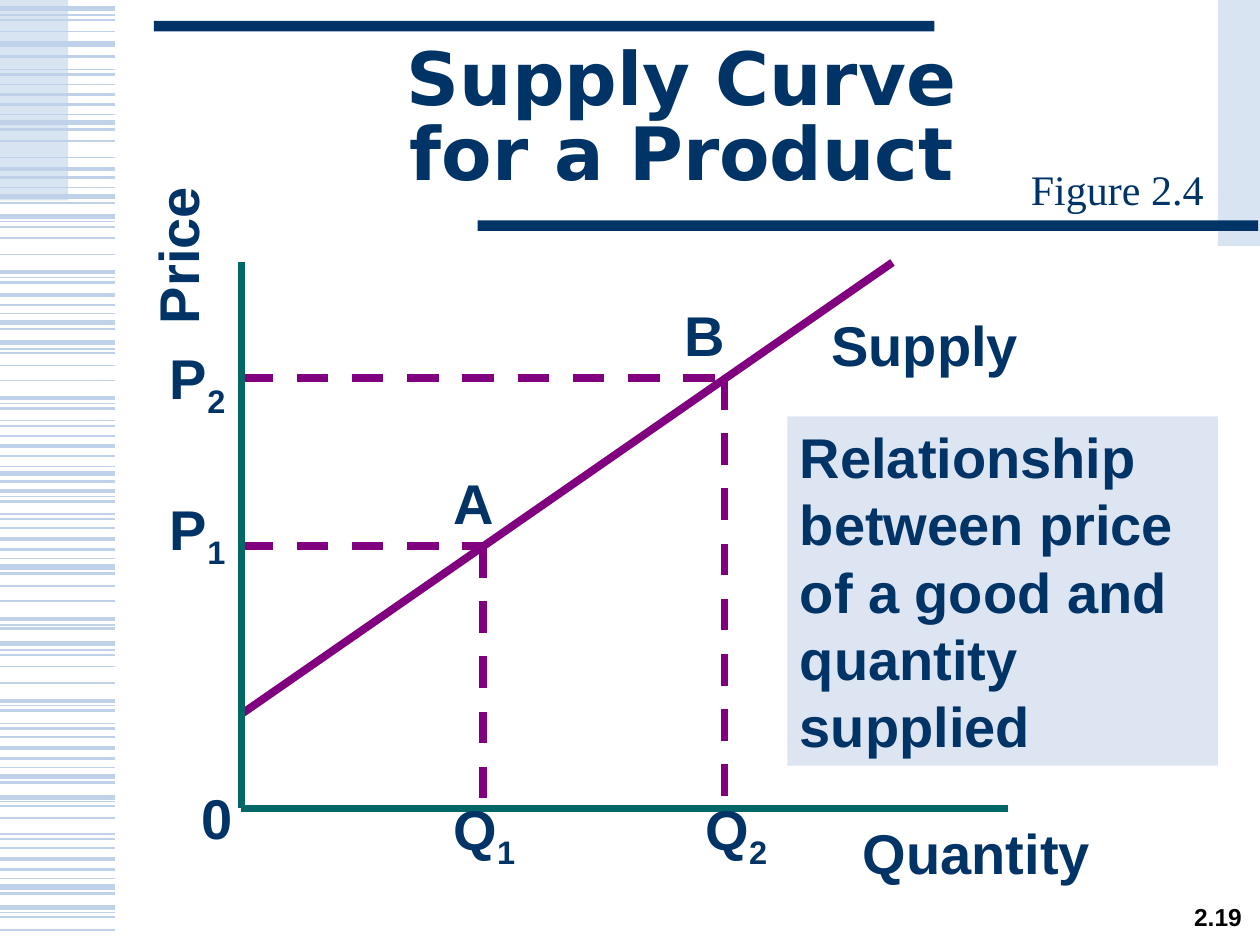
from pptx import Presentation
from pptx.dml.color import RGBColor
from pptx.enum import dml, shapes, text
from pptx.oxml import ns
from pptx.util import Pt
from lxml import etree

HUES = {
    "navy": "003366", "pale": "D9E4F3", "stripe": "C0D2EA", "note": "DDE5F3",
    "curve": "800080", "axis": "006666", "black": "000000",
}

# Line weight -> heights in hundredths of the slide's width / 10
STRIPES = {
    0.75: [12, 55, 91, 149, 176, 220, 249, 277, 320, 334, 370, 394, 408, 443,
           496, 516, 560, 574, 609, 636, 697, 724],
    1: [16, 25, 67, 112, 125, 180, 189, 202, 280, 290, 302, 346, 419, 465,
        477, 520, 529, 542, 585, 640, 649, 662, 673, 728, 738],
    1.5: [45, 59, 83, 103, 141, 161, 224, 242, 261, 324, 338, 362, 382, 398,
          412, 436, 455, 499, 564, 578, 602, 621, 666, 690, 709],
    2.25: [75, 134, 216, 234, 316, 354, 390, 428, 491, 556, 594, 682],
    3: [7, 35, 97, 156, 172, 256, 272, 376, 450, 511, 616, 633, 704, 720],
}
STEP = 0.72


def tint(name):
    return RGBColor.from_string(HUES[name])


def rect(slide, box, hue):
    shape = slide.shapes.add_shape(shapes.MSO_SHAPE.RECTANGLE, *map(Pt, box))
    shape.shadow.inherit = False
    shape.fill.solid()
    shape.fill.fore_color.rgb = tint(hue)
    shape.line.fill.background()
    return shape


def rule(slide, start, end, hue, width, dash=False):
    """Draw a straight line between two points."""
    line = slide.shapes.add_connector(
        shapes.MSO_CONNECTOR.STRAIGHT, *map(Pt, (*start, *end)))
    line.line.color.rgb = tint(hue)
    line.line.width = Pt(width)
    if dash:
        line.line.dash_style = dml.MSO_LINE.DASH
    etree.SubElement(line._element.spPr, ns.qn("a:effectLst"))


def add_run(para, words, size=32, face="Arial", hue="navy", bold=True):
    run = para.add_run()
    run.text = words
    run.font.size = Pt(size)
    run.font.name = face
    run.font.bold = bold
    run.font.color.rgb = tint(hue)
    return run


def write(frame, words, sub="", size=32, **style):
    """Fill a wrapped, left-aligned frame with text and an optional subscript."""
    frame.word_wrap = True
    frame.vertical_anchor = text.MSO_ANCHOR.TOP
    frame.auto_size = text.MSO_AUTO_SIZE.SHAPE_TO_FIT_TEXT
    para = frame.paragraphs[0]
    para.alignment = text.PP_ALIGN.LEFT
    para.line_spacing = Pt(1.2 * size)
    add_run(para, words, size, **style)
    if sub:
        run = add_run(para, sub, size, **style)
        run.font._element.set("baseline", "-25000")


def label(slide, box, words, sub="", **style):
    shape = slide.shapes.add_textbox(*map(Pt, box))
    write(shape.text_frame, words, sub, **style)
    return shape


def backdrop(slide, box):
    """Place the pale corners, heavy bars and striped left edge."""
    x, y, w, h = box
    rect(slide, (x, y, 39, 114.5), "pale")
    rect(slide, (x + w - 24, y, 24, 140.5), "pale")
    rect(slide, (x + 88, y + 12, 446, 6), "navy")
    rect(slide, (x + 273, y + 126, 446, 6), "navy")
    for width, rows in STRIPES.items():
        for row in rows:
            level = y + row * STEP
            rule(slide, (x, level), (x + 66, level), "stripe", width)


def heading(slide, box):
    title = slide.shapes.title
    title.left, title.top, title.width, title.height = map(Pt, box)
    frame = title.text_frame
    frame.word_wrap = True
    frame.auto_size = text.MSO_AUTO_SIZE.NONE
    frame.vertical_anchor = text.MSO_ANCHOR.MIDDLE
    para = frame.paragraphs[0]
    para.alignment = text.PP_ALIGN.CENTER
    para.line_spacing = 0.85
    add_run(para, "Supply Curve", 42, "DejaVu Sans")
    para.add_line_break()
    add_run(para, "for a Product", 42, "DejaVu Sans")


def plot(slide, box):
    """Draw the supply curve, its two marked points and the axes."""
    x, y, w, h = box
    base = y + h
    rule(slide, (x, y + 258), (x + 372, y), "curve", 4.5)
    for across, down in ((138, 162), (276, 66)):
        point = (x + across, y + down)
        rule(slide, (x, y + down), point, "curve", 4.5, dash=True)
        rule(slide, point, (x + across, base), "curve", 4.5, dash=True)
    rule(slide, (x, base), (x, y), "axis", 4.5)
    rule(slide, (x, base), (x + w, base), "axis", 4.5)

    names = [
        (330, 24, 156, "Supply", ""), (348, 314, 156, "Quantity", ""),
        (246, 18, 30, "B", ""), (114, 114, 30, "A", ""),
        (-48, 48, 54, "P", "2"), (-48, 134.5, 54, "P", "1"),
        (114, 306, 54, "Q", "1"), (258, 306, 54, "Q", "2"),
        (-30, 294, 24, "0", ""),
    ]
    for left, top, wide, words, sub in names:
        label(slide, (x + left, y + top, wide, 45.5), words, sub)
    price = label(slide, (x - 97, y - 40.5, 120, 45.5), "Price")
    price.rotation = 270


def note(slide, box):
    shape = rect(slide, box, "note")
    write(shape.text_frame,
          "Relationship between price of a good and quantity supplied")


def folio(slide, box):
    """Place the page number."""
    frame = slide.shapes.add_textbox(*map(Pt, box)).text_frame
    frame.word_wrap = False
    frame.vertical_anchor = text.MSO_ANCHOR.MIDDLE
    para = frame.paragraphs[0]
    para.alignment = text.PP_ALIGN.CENTER
    para.line_spacing = 0.7
    add_run(para, "2.19", 14, hue="black")


def main():
    deck = Presentation()
    deck.slide_width, deck.slide_height = Pt(720), Pt(540)
    slide = deck.slides.add_slide(deck.slide_layouts[5])
    backdrop(slide, (0, 0, 720, 540))
    heading(slide, (90, 24, 599, 90))
    plot(slide, (138, 150, 438, 312))
    note(slide, (450, 238, 246, 199.5))
    label(slide, (582, 90, 120, 36), "Figure 2.4", size=24,
          face="Times New Roman", bold=False)
    folio(slide, (672, 516, 48, 19.5))
    deck.save("out.pptx")


if __name__ == "__main__":
    main()
